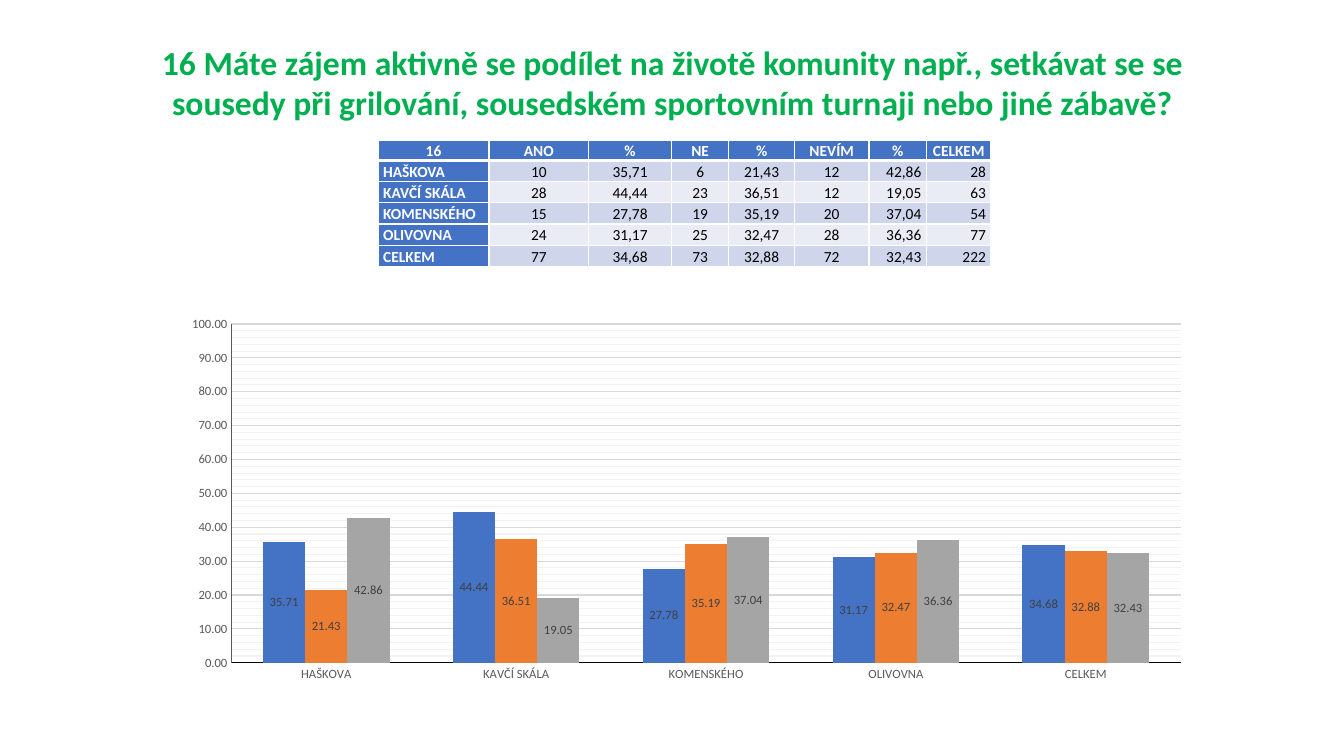
"""Survey question 16: results table above a clustered column chart."""
from pptx import Presentation
from pptx.chart.data import CategoryChartData
from pptx.dml.color import RGBColor
from pptx.enum import chart as ch, text as tx
from pptx.oxml import parse_xml
from pptx.oxml.ns import nsdecls, qn
from pptx.util import Inches, Pt


def style_font(font, size, color, bold=False):
    font.name, font.size, font.bold = "Calibri", Pt(size), bold
    font.color.rgb = RGBColor.from_string(color)


def style_line(line, color):
    line.width = Pt(0.75)
    line.color.rgb = RGBColor.from_string(color)


BLUE, ORANGE, GREY = "4472C4", "ED7D31", "A5A5A5"
HEADER = ["16", "ANO", "%", "NE", "%", "NEVÍM", "%", "CELKEM"]
ROWS = [
    ["HAŠKOVA", "10", "35,71", "6", "21,43", "12", "42,86", "28"],
    ["KAVČÍ SKÁLA", "28", "44,44", "23", "36,51", "12", "19,05", "63"],
    ["KOMENSKÉHO", "15", "27,78", "19", "35,19", "20", "37,04", "54"],
    ["OLIVOVNA", "24", "31,17", "25", "32,47", "28", "36,36", "77"],
    ["CELKEM", "77", "34,68", "73", "32,88", "72", "32,43", "222"],
]
COL_WIDTHS = [1.1, 0.99, 0.82, 0.57, 0.65, 0.74, 0.57, 0.64]

prs = Presentation()
prs.slide_width, prs.slide_height = Inches(13.33), Inches(7.5)
s = prs.slides.add_slide(prs.slide_layouts[5])

title = s.shapes.title
title.left, title.top = Inches(0.92), Inches(0.4)
title.width, title.height = Inches(11.5), Inches(0.83)
tf = title.text_frame
tf.text = ("16 Máte zájem aktivně se podílet na životě komunity např., setkávat se se "
           "sousedy při grilování, sousedském sportovním turnaji nebo jiné zábavě?")
tf.word_wrap = True
tf.auto_size = tx.MSO_AUTO_SIZE.NONE
tf.vertical_anchor = tx.MSO_ANCHOR.MIDDLE
p = tf.paragraphs[0]
p.alignment = tx.PP_ALIGN.CENTER
style_font(p.runs[0].font, 24, "00B050", True)

table = s.shapes.add_table(len(ROWS) + 1, len(HEADER), Inches(3.75), Inches(1.39),
                           Inches(sum(COL_WIDTHS)), Inches(1.25)).table
for column, width in zip(table.columns, COL_WIDTHS):
    column.width = Inches(width)
for i, values in enumerate([HEADER] + ROWS):
    table.rows[i].height = Inches(0.21 if i else 0.2)
    for j, value in enumerate(values):
        cell = table.cell(i, j)
        heading = i == 0 or j == 0
        cell.text = value
        cell.margin_left = cell.margin_right = Inches(0.05)
        cell.margin_top = cell.margin_bottom = 0
        cell.vertical_anchor = (tx.MSO_ANCHOR.MIDDLE if i == 0 and j != 6
                                else tx.MSO_ANCHOR.BOTTOM)
        p = cell.text_frame.paragraphs[0]
        p.line_spacing = 1.07
        if i == 0 or 0 < j < 6:
            p.alignment = tx.PP_ALIGN.CENTER
        else:
            p.alignment = tx.PP_ALIGN.RIGHT if j else tx.PP_ALIGN.LEFT
        style_font(p.runs[0].font, 11, "FFFFFF" if heading else "000000", heading)
        borders = {"L": 1, "R": 1, "T": 3 if i == 1 else 1, "B": 1 if i else 3}
        for side, width in borders.items():
            cell._tc.get_or_add_tcPr().append(parse_xml(
                f'<a:ln{side} {nsdecls("a")} w="{Pt(width)}"><a:solidFill>'
                f'<a:srgbClr val="FFFFFF"/></a:solidFill></a:ln{side}>'))
        cell.fill.solid()
        cell.fill.fore_color.rgb = RGBColor.from_string(
            BLUE if heading else "CFD5EA" if i % 2 else "E9EBF5")

data = CategoryChartData(number_format="0.00")
data.categories = [row[0] for row in ROWS]
for j in (2, 4, 6):
    data.add_series(HEADER[j - 1], [float(row[j].replace(",", ".")) for row in ROWS])
chart = s.shapes.add_chart(ch.XL_CHART_TYPE.COLUMN_CLUSTERED, Inches(1.2), Inches(2.93),
                           Inches(11.17), Inches(4.25), data).chart
chart.has_legend = chart.has_title = False
style_font(chart.font, 10, "000000")

plot = chart.plots[0]
plot.gap_width, plot.overlap, plot.vary_by_categories = 150, 0, False
for series, color in zip(plot.series, (BLUE, ORANGE, GREY)):
    series.format.fill.solid()
    series.format.fill.fore_color.rgb = RGBColor.from_string(color)
    labels = series.data_labels
    labels.show_value = True
    labels.position = ch.XL_LABEL_POSITION.CENTER
    labels.number_format, labels.number_format_is_linked = "0.00", False
    style_font(labels.font, 9, "404040")

for axis, color in ((chart.category_axis, "000000"), (chart.value_axis, "595959")):
    axis.major_tick_mark = axis.minor_tick_mark = ch.XL_TICK_MARK.NONE
    style_font(axis.tick_labels.font, 9, "595959")
    style_line(axis.format.line, color)
axis = chart.value_axis
axis.minimum_scale, axis.maximum_scale, axis.major_unit, axis.minor_unit = 0, 100, 10, 2
axis.has_major_gridlines = axis.has_minor_gridlines = True
style_line(axis.major_gridlines.format.line, "D9D9D9")
axis.tick_labels.number_format = "0.00"
axis.tick_labels.number_format_is_linked = False

plot_area = chart._chartSpace.chart.plotArea
minor_gridlines = next(plot_area.iter(qn("c:minorGridlines")))
minor_gridlines.append(parse_xml(
    f'<c:spPr {nsdecls("c", "a")}><a:ln w="{Pt(0.75)}"><a:solidFill>'
    '<a:srgbClr val="F2F2F2"/></a:solidFill></a:ln></c:spPr>'))
for layout in plot_area.findall(qn("c:layout")):
    plot_area.remove(layout)
plot_area.insert(0, parse_xml(
    f'<c:layout {nsdecls("c")}><c:manualLayout><c:layoutTarget val="inner"/>'
    '<c:xMode val="edge"/><c:yMode val="edge"/><c:x val="0.098"/><c:y val="0.067"/>'
    '<c:w val="0.843"/><c:h val="0.791"/></c:manualLayout></c:layout>'))

prs.save("out.pptx")
